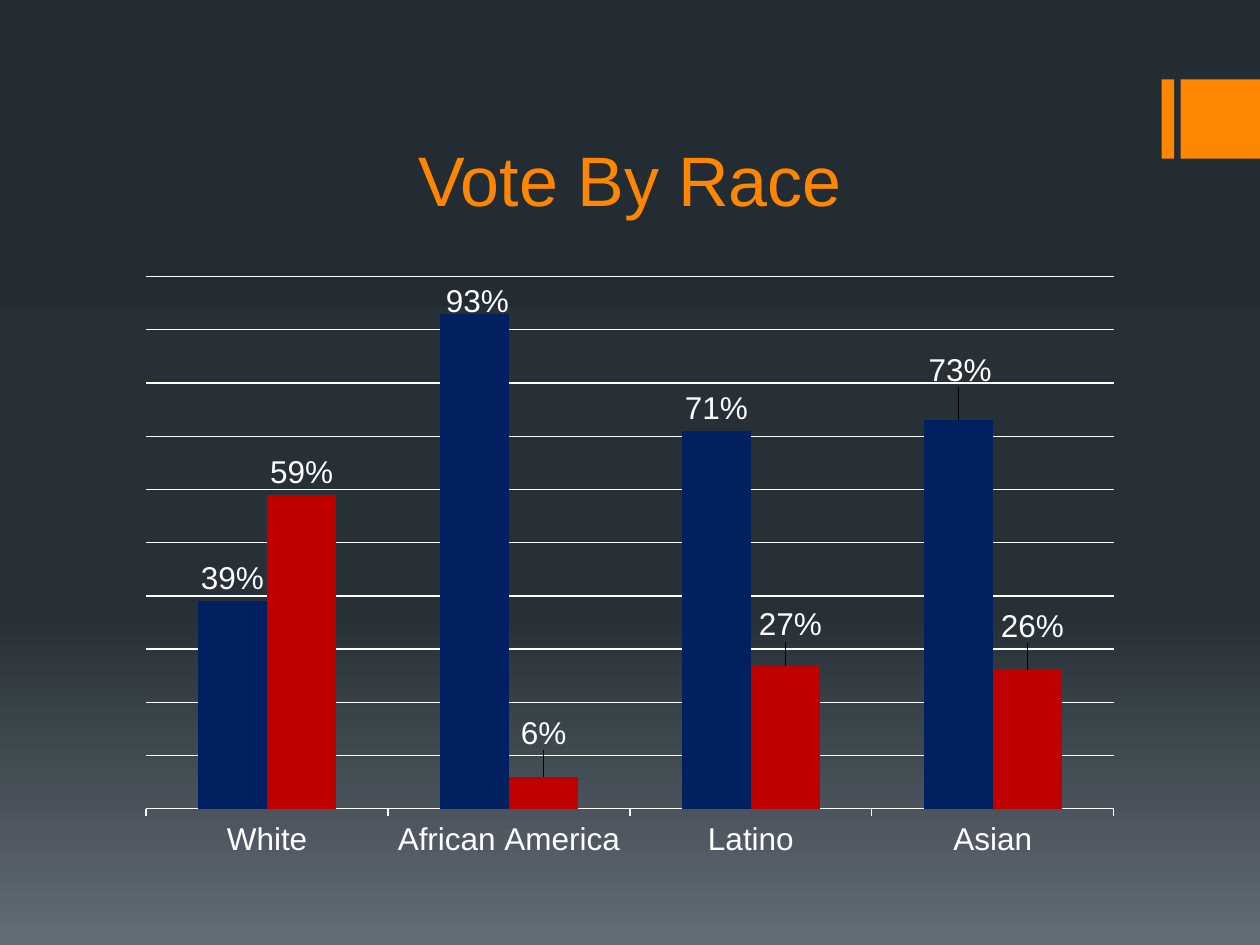
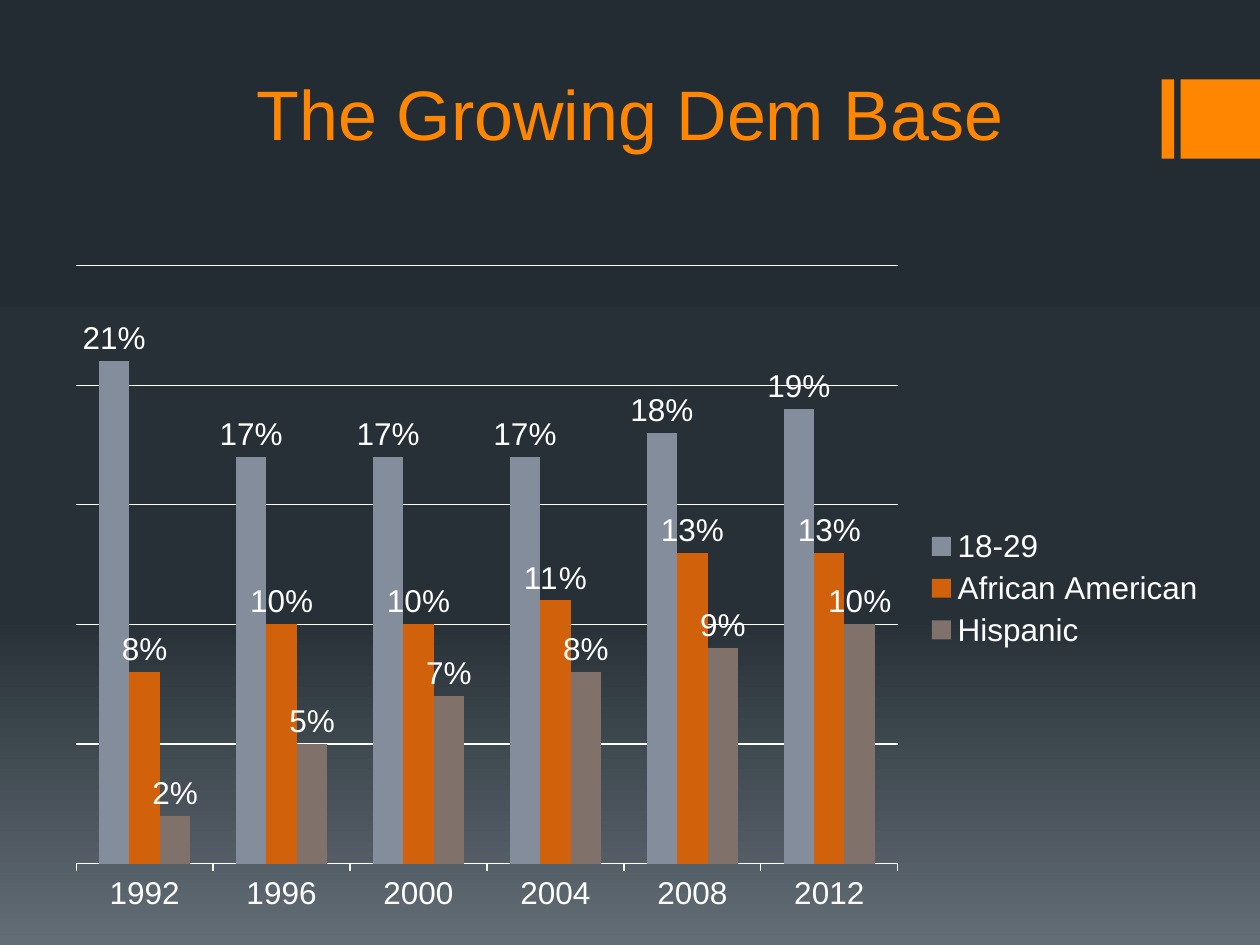
from copy import deepcopy

from lxml import etree
from pptx import Presentation
from pptx.chart.data import CategoryChartData
from pptx.dml.color import RGBColor
from pptx.enum import chart as charts, shapes, text
from pptx.oxml.ns import qn
from pptx.util import Inches, Pt

WIDTH, HEIGHT = Inches(10), Inches(7.5)
FONT = "Arial"
WHITE = RGBColor(0xFF, 0xFF, 0xFF)
ORANGE = RGBColor(0xFF, 0x86, 0x00)
NAVY = RGBColor(0x00, 0x20, 0x60)
RED = RGBColor(0xC0, 0x00, 0x00)
STEEL = RGBColor(0x83, 0x8D, 0x9B)
RUST = RGBColor(0xD2, 0x61, 0x0C)
TAUPE = RGBColor(0x80, 0x71, 0x6A)
BACKGROUND_STOPS = [
    (0, RGBColor(0x24, 0x2C, 0x33)),
    (0.65, RGBColor(0x27, 0x30, 0x37)),
    (1, RGBColor(0x63, 0x6D, 0x76)),
]
CATEGORY_COUNT_GAP = 150

RACE_VOTE = {
    "title": "Vote By Race",
    "title_box": (0.1, 0.07, 0.8, 0.17),
    "chart_box": (0.1, 0.28, 0.8, 0.64),
    "categories": ["White", "African America", "Latino", "Asian"],
    "series": [
        ("Series 1", NAVY, [0.39, 0.93, 0.71, 0.73]),
        ("Series 2", RED, [0.59, 0.06, 0.27, 0.26]),
    ],
    "axis": (1, 0.1),
    "plot": (0.02, 0.02, 0.96, 0.88),
    "legend": False,
    # (series, point): shift as a share of the chart's width and height
    "label_shifts": {
        (0, 1): (0.003, 0.016),
        (0, 3): (0.002, -0.046),
        (1, 1): (0, -0.035),
        (1, 2): (0.005, -0.03),
        (1, 3): (0.005, -0.036),
    },
}
DEM_BASE = {
    "title": "The Growing Dem Base",
    "title_box": (0.1, 0, 0.8, 0.17),
    "chart_box": (0.042, 0.267, 0.925, 0.711),
    "categories": ["1992", "1996", "2000", "2004", "2008", "2012"],
    "series": [
        ("18-29", STEEL, [0.21, 0.17, 0.17, 0.17, 0.18, 0.19]),
        ("African American", RUST, [0.08, 0.1, 0.1, 0.11, 0.13, 0.13]),
        ("Hispanic", TAUPE, [0.02, 0.05, 0.07, 0.08, 0.09, 0.1]),
    ],
    "axis": (0.25, 0.05),
    "plot": (0.02, 0.02, 0.705, 0.89),
    "legend": True,
    "label_shifts": {},
}


def place(box):
    """Turn shares of the slide's size into lengths."""
    left, top, width, height = box
    return (round(left * WIDTH), round(top * HEIGHT),
            round(width * WIDTH), round(height * HEIGHT))


def paint_background(master):
    fill = master.background.fill
    fill.gradient()
    fill.gradient_angle = 270
    stop_list = master.element.find(".//" + qn("a:gsLst"))
    stop_list.insert(1, deepcopy(stop_list[0]))
    for stop, (position, color) in zip(fill.gradient_stops, BACKGROUND_STOPS):
        stop.position = position
        stop.color.rgb = color


def add_corner_band(slide, top=0.084, height=0.084):
    for left, width in ((0.922, 0.01), (0.937, 0.063)):
        bar = slide.shapes.add_shape(
            shapes.MSO_SHAPE.RECTANGLE, *place((left, top, width, height)))
        bar.shadow.inherit = False
        bar.fill.solid()
        bar.fill.fore_color.rgb = ORANGE
        bar.line.fill.background()


def add_title(slide, title, box):
    frame = slide.shapes.add_textbox(*place(box)).text_frame
    frame.word_wrap = True
    frame.vertical_anchor = text.MSO_ANCHOR.BOTTOM
    paragraph = frame.paragraphs[0]
    paragraph.text = title
    paragraph.alignment = text.PP_ALIGN.CENTER
    style_font(paragraph.font, 40, ORANGE)


def style_font(font, size, color):
    font.name = FONT
    font.size = Pt(size)
    font.color.rgb = color


def set_layout(parent, index, settings):
    """Give a chart part a manual layout, as its child at index."""
    for old in parent.findall(qn("c:layout")):
        parent.remove(old)
    layout = etree.Element(qn("c:layout"))
    manual = etree.SubElement(layout, qn("c:manualLayout"))
    for tag, value in settings.items():
        etree.SubElement(manual, qn("c:" + tag)).set("val", str(value))
    parent.insert(index, layout)


def style_axes(chart, maximum, step):
    value_axis = chart.value_axis
    value_axis.visible = False
    value_axis.minimum_scale = 0
    value_axis.maximum_scale = maximum
    value_axis.major_unit = step
    value_axis.has_major_gridlines = True
    category_axis = chart.category_axis
    category_axis.major_tick_mark = charts.XL_TICK_MARK.OUTSIDE
    for line in (value_axis.major_gridlines.format.line,
                 category_axis.format.line):
        line.color.rgb = WHITE
        line.width = Pt(0.75)


def style_series(series, color):
    series.format.fill.solid()
    series.format.fill.fore_color.rgb = color
    labels = series.data_labels
    labels.show_value = True
    labels.number_format = "0%"
    labels.number_format_is_linked = False
    labels.position = charts.XL_LABEL_POSITION.OUTSIDE_END
    style_font(labels.font, 18, WHITE)


def shift_label(series, point_index, shift):
    label = series.points[point_index].data_label
    label.position = charts.XL_LABEL_POSITION.OUTSIDE_END
    style_font(label.font, 18, WHITE)
    for element in series.data_labels._element.findall(qn("c:dLbl")):
        if element.find(qn("c:idx")).get("val") == str(point_index):
            set_layout(element, 1, dict(zip("xy", shift)))


def add_column_chart(slide, content):
    data = CategoryChartData(number_format="0%")
    data.categories = content["categories"]
    for name, _, values in content["series"]:
        data.add_series(name, values)
    chart = slide.shapes.add_chart(
        charts.XL_CHART_TYPE.COLUMN_CLUSTERED,
        *place(content["chart_box"]), data).chart
    style_font(chart.font, 18, WHITE)
    chart.has_title = False
    chart.has_legend = content["legend"]
    if chart.has_legend:
        chart.legend.position = charts.XL_LEGEND_POSITION.RIGHT
        chart.legend.include_in_layout = False
    style_axes(chart, *content["axis"])

    plot = chart.plots[0]
    plot.gap_width = CATEGORY_COUNT_GAP
    plot.overlap = 0
    plot.vary_by_categories = False
    for series, (_, color, _) in zip(plot.series, content["series"]):
        style_series(series, color)
    for (series_index, point_index), shift in content["label_shifts"].items():
        shift_label(plot.series[series_index], point_index, shift)

    modes = {"layoutTarget": "inner", "xMode": "edge", "yMode": "edge"}
    plot_area = chart._chartSpace.find(".//" + qn("c:plotArea"))
    set_layout(plot_area, 0, modes | dict(zip("xywh", content["plot"])))


def add_chart_slide(presentation, content):
    slide = presentation.slides.add_slide(presentation.slide_layouts[6])
    add_corner_band(slide)
    add_title(slide, content["title"], content["title_box"])
    add_column_chart(slide, content)


def main():
    presentation = Presentation()
    presentation.slide_width, presentation.slide_height = WIDTH, HEIGHT
    paint_background(presentation.slide_master)
    for content in (RACE_VOTE, DEM_BASE):
        add_chart_slide(presentation, content)
    presentation.save("out.pptx")


if __name__ == "__main__":
    main()
